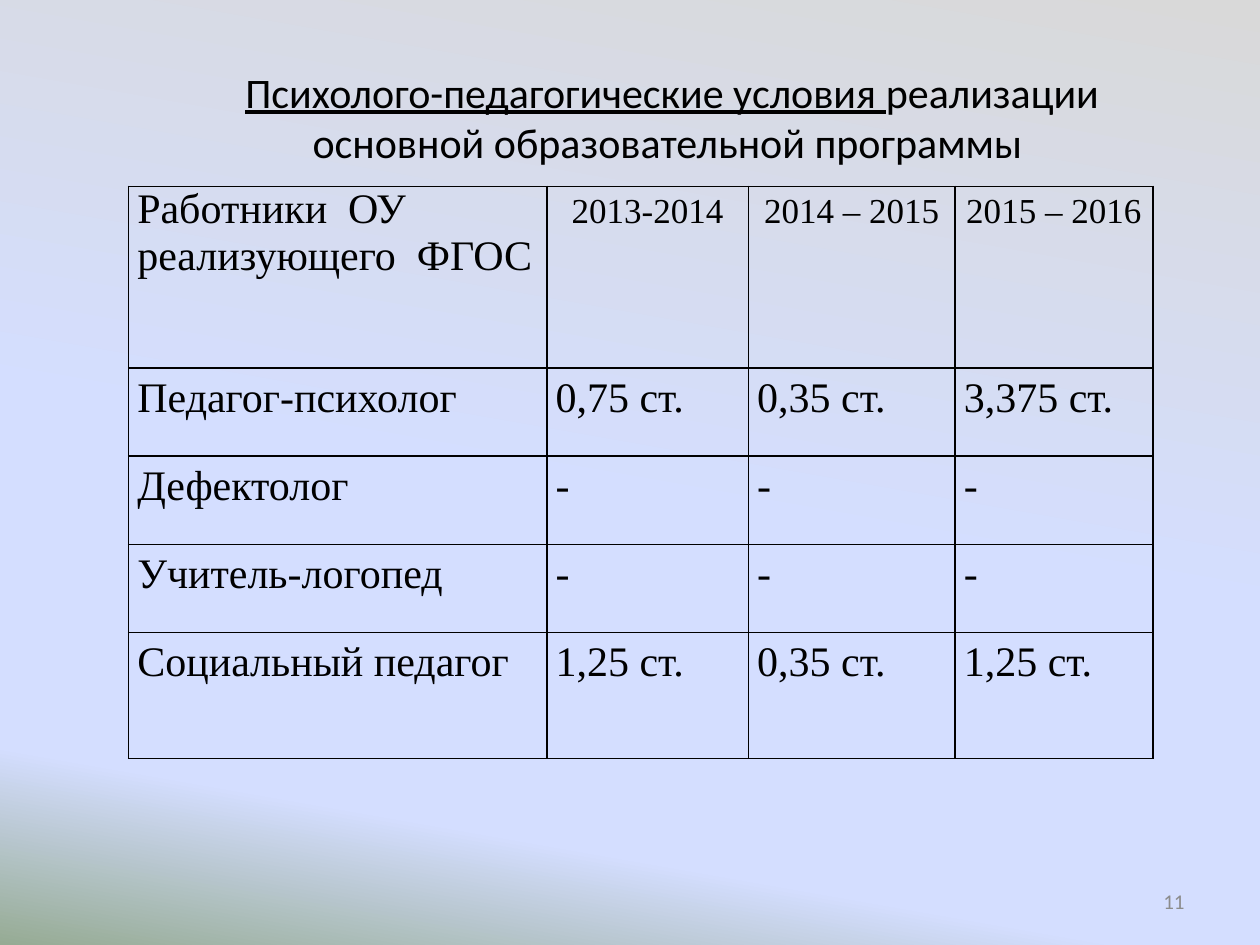
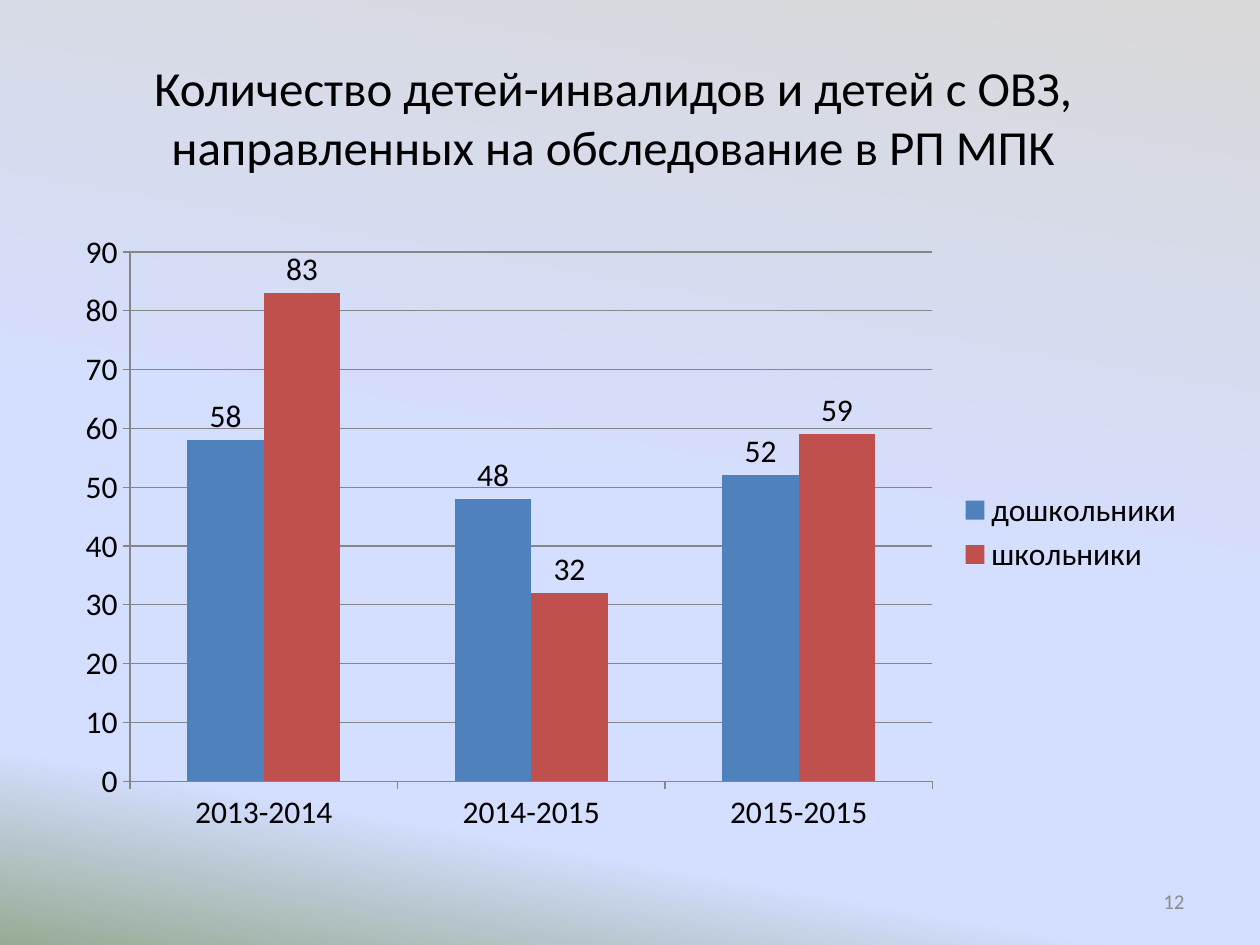
from dataclasses import dataclass

from lxml.etree import SubElement
from pptx import Presentation
from pptx.chart.data import CategoryChartData
from pptx.dml.color import RGBColor
from pptx.enum.chart import XL_CHART_TYPE as ChartType
from pptx.enum.chart import XL_LABEL_POSITION as LabelPosition
from pptx.enum.chart import XL_LEGEND_POSITION as LegendPosition
from pptx.enum.text import MSO_ANCHOR as Anchor
from pptx.enum.text import PP_ALIGN as Align
from pptx.oxml.ns import qn
from pptx.slide import Slide
from pptx.table import _Cell as Cell
from pptx.text.text import _Paragraph as Paragraph
from pptx.util import Pt

EMU_PER_PX = 9144


def px(length: int) -> int:
    return length * EMU_PER_PX


@dataclass(frozen=True)
class Theme:
    ink: str = "000000"
    muted: str = "8C8C8C"
    axis: str = "868686"
    series: tuple[str, ...] = ("4F81BD", "C0504D")
    backdrop: tuple[tuple[int, str], ...] = (
        (0, "D9D9D9"),
        (53, "D4DEFF"),
        (83, "D4DEFF"),
        (100, "96AB94"),
    )
    backdrop_angle: int = 260
    sans: str = "Calibri"
    serif: str = "Times New Roman"
    chart_title_size: int = 28
    body_size: int = 24
    year_size: int = 20
    chart_size: int = 18
    number_size: int = 12


@dataclass(frozen=True)
class Area:
    left: int
    top: int
    width: int
    height: int

    def emu(self) -> tuple[int, ...]:
        return tuple(map(px, (self.left, self.top, self.width, self.height)))


@dataclass(frozen=True)
class Span:
    text: str
    size: int
    font: str
    color: str
    underline: bool = False


@dataclass(frozen=True)
class Series:
    name: str
    values: tuple[int, ...]


THEME = Theme()
NUMBER_AREA = Area(717, 695, 233, 40)

STAFF_AREA = Area(102, 148, 813, 454)
STAFF_COLUMNS = (332, 160, 164, 157)
STAFF_ROWS = (144, 70, 70, 70, 100)
STAFF = (
    ("Работники  ОУ реализующего  ФГОС", "2013-2014", "2014 – 2015", "2015 – 2016"),
    ("Педагог-психолог", "0,75 ст.", "0,35 ст.", "3,375 ст."),
    ("Дефектолог", "-", "-", "-"),
    ("Учитель-логопед", "-", "-", "-"),
    ("Социальный педагог", "1,25 ст.", "0,35 ст.", "1,25 ст."),
)

CHILDREN_AREA = Area(50, 175, 900, 495)
CHILDREN_YEARS = ("2013-2014", "2014-2015", "2015-2015")
CHILDREN = (
    Series("дошкольники", (58, 48, 52)),
    Series("школьники", (83, 32, 59)),
)


def paint_backdrop(master) -> None:
    fill = master.background.fill
    fill.gradient()
    fill.gradient_angle = THEME.backdrop_angle
    stops = master.element.find(".//" + qn("p:bgPr")).find(".//" + qn("a:gsLst"))
    for stop in list(stops):
        stops.remove(stop)
    for percent, color in THEME.backdrop:
        stop = SubElement(stops, qn("a:gs"), pos=str(percent * 1000))
        SubElement(stop, qn("a:srgbClr"), val=color)


def write_span(para: Paragraph, span: Span) -> None:
    run = para.add_run()
    run.text = span.text
    run.font.size = Pt(span.size)
    run.font.name = span.font
    run.font.color.rgb = RGBColor.from_string(span.color)
    if span.underline:
        run.font.underline = True


def add_text(page: Slide, area: Area, align: Align, *spans: Span) -> None:
    frame = page.shapes.add_textbox(*area.emu()).text_frame
    frame.word_wrap = True
    frame.vertical_anchor = Anchor.MIDDLE
    para = frame.paragraphs[0]
    para.alignment = align
    for span in spans:
        write_span(para, span)


def title_span(text: str, size: int, underline: bool = False) -> Span:
    return Span(text, size, THEME.sans, THEME.ink, underline)


def add_page(deck, number: int, title_area: Area, *title: Span) -> Slide:
    page = deck.slides.add_slide(deck.slide_layouts[6])
    add_text(page, title_area, Align.CENTER, *title)
    number_span = Span(str(number), THEME.number_size, THEME.sans, THEME.muted)
    add_text(page, NUMBER_AREA, Align.RIGHT, number_span)
    return page


def outline_cell(cell: Cell) -> None:
    properties = cell._tc.get_or_add_tcPr()
    for index, side in enumerate(("a:lnL", "a:lnR", "a:lnT", "a:lnB")):
        line = SubElement(properties, qn(side), w=str(Pt(1)))
        fill = SubElement(line, qn("a:solidFill"))
        SubElement(fill, qn("a:srgbClr"), val=THEME.ink)
        properties.insert(index, line)


def fill_cell(cell: Cell, text: str, is_year: bool, is_corner: bool) -> None:
    cell.fill.background()
    outline_cell(cell)
    cell.margin_left = cell.margin_right = px(7)
    cell.margin_top = cell.margin_bottom = 0
    para = cell.text_frame.paragraphs[0]
    para.space_after = Pt(10)
    if not is_corner:
        para.line_spacing = 1.15
    if is_year:
        para.alignment = Align.CENTER
    size = THEME.year_size if is_year else THEME.body_size
    write_span(para, Span(text, size, THEME.serif, THEME.ink))


def add_staff_table(page: Slide) -> None:
    table = page.shapes.add_table(
        len(STAFF_ROWS), len(STAFF_COLUMNS), *STAFF_AREA.emu()
    ).table
    table.first_row = table.horz_banding = False
    for column, width in zip(table.columns, STAFF_COLUMNS):
        column.width = px(width)
    for row, height, texts in zip(table.rows, STAFF_ROWS, STAFF):
        row.height = px(height)
        is_header = texts is STAFF[0]
        for index, (cell, text) in enumerate(zip(row.cells, texts)):
            fill_cell(cell, text, is_header and index > 0, is_header and index == 0)


def add_children_chart(page: Slide) -> None:
    data = CategoryChartData()
    data.categories = CHILDREN_YEARS
    for series in CHILDREN:
        data.add_series(series.name, series.values)
    chart = page.shapes.add_chart(
        ChartType.COLUMN_CLUSTERED, *CHILDREN_AREA.emu(), data
    ).chart
    chart.font.size = Pt(THEME.chart_size)
    chart.font.name = THEME.sans
    chart.font.color.rgb = RGBColor.from_string(THEME.ink)
    chart.has_title = False
    chart.has_legend = True
    chart.legend.position = LegendPosition.RIGHT
    chart.legend.include_in_layout = False

    chart.value_axis.has_major_gridlines = True
    axis_color = RGBColor.from_string(THEME.axis)
    for lined in (chart.category_axis, chart.value_axis, chart.value_axis.major_gridlines):
        lined.format.line.color.rgb = axis_color
        lined.format.line.width = Pt(0.75)

    plot = chart.plots[0]
    plot.vary_by_categories = False
    plot.gap_width = 150
    plot.has_data_labels = True
    plot.data_labels.show_value = True
    plot.data_labels.position = LabelPosition.OUTSIDE_END
    for series, color in zip(plot.series, THEME.series):
        series.format.fill.solid()
        series.format.fill.fore_color.rgb = RGBColor.from_string(color)


def main() -> None:
    deck = Presentation()
    deck.slide_width, deck.slide_height = px(1000), px(750)
    paint_backdrop(deck.slide_master)

    staff_page = add_page(
        deck,
        11,
        Area(117, 30, 833, 125),
        title_span("Психолого-педагогические условия ", THEME.body_size, True),
        title_span("реализации основной образовательной программы ", THEME.body_size),
    )
    add_staff_table(staff_page)

    children_page = add_page(
        deck,
        12,
        Area(23, 30, 927, 125),
        title_span(
            "Количество детей-инвалидов и детей с ОВЗ, "
            "направленных на обследование в РП МПК",
            THEME.chart_title_size,
        ),
    )
    add_children_chart(children_page)

    deck.save("out.pptx")


if __name__ == "__main__":
    main()
